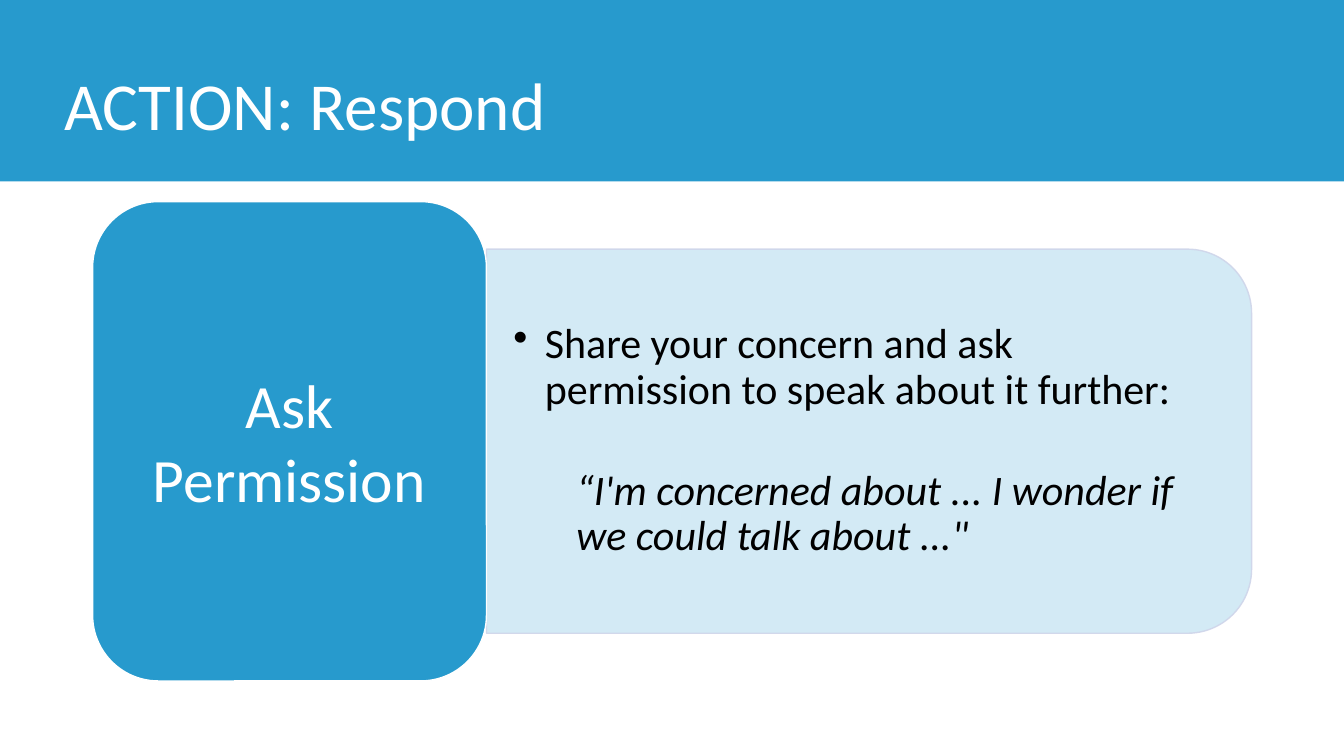
from dataclasses import dataclass

from lxml import etree
from pptx import Presentation
from pptx.dml.color import RGBColor
from pptx.enum.shapes import MSO_SHAPE
from pptx.enum.text import MSO_ANCHOR, PP_ALIGN
from pptx.oxml.ns import qn
from pptx.util import Pt

RECTANGLE = MSO_SHAPE.RECTANGLE
ROUNDED = MSO_SHAPE.ROUNDED_RECTANGLE
TWO_ROUNDED = MSO_SHAPE.ROUND_2_SAME_RECTANGLE
MIDDLE = MSO_ANCHOR.MIDDLE
LEFT, CENTER = PP_ALIGN.LEFT, PP_ALIGN.CENTER


@dataclass(frozen=True)
class Theme:
    """Colours, font and type sizes of the slide."""
    blue: RGBColor = RGBColor(0x27, 0x9A, 0xCD)
    outline: RGBColor = RGBColor(0xCF, 0xD5, 0xEA)
    white: RGBColor = RGBColor(0xFF, 0xFF, 0xFF)
    black: RGBColor = RGBColor(0, 0, 0)
    font: str = "Calibri"
    title_size: int = 48
    step_size: int = 44
    body_size: int = 30


THEME = Theme()


def add_block(slide, kind, box, outline=None):
    """Add a blue shape in the box, with an optional outline colour."""
    block = slide.shapes.add_shape(kind, *map(Pt, box))
    block.shadow.inherit = False
    block.fill.solid()
    block.fill.fore_color.rgb = THEME.blue
    if outline is None:
        block.line.fill.background()
    else:
        block.line.color.rgb = outline
        block.line.width = Pt(1)
    return block


def set_opacity(holder, percent):
    """Make the solid colour directly inside the holder translucent."""
    color = holder.find(qn("a:solidFill")).find(qn("a:srgbClr"))
    etree.SubElement(color, qn("a:alpha")).set("val", str(percent * 1000))


def set_frame(frame, side, edge):
    """Wrap and centre the frame vertically with the given insets."""
    frame.word_wrap = True
    frame.vertical_anchor = MIDDLE
    frame.margin_left = frame.margin_right = Pt(side)
    frame.margin_top = frame.margin_bottom = Pt(edge)


def style(paragraph, size, color, align=LEFT, spacing=0.9, italic=False):
    """Format a paragraph and its runs."""
    paragraph.alignment = align
    paragraph.line_spacing = spacing
    for run in paragraph.runs:
        run.font.name = THEME.font
        run.font.size = Pt(size)
        run.font.color.rgb = color
        run.font.italic = italic


def add_header(slide, box):
    """Draw the title band with its heading."""
    left, top, width, height = box
    add_block(slide, RECTANGLE, box)
    heading = slide.shapes.add_textbox(
        Pt(left + 38.9), Pt(top + 27.4), Pt(width - 110.4), Pt(height - 28.8))
    set_frame(heading.text_frame, 7.2, 3.6)
    heading.text_frame.text = "ACTION: Respond"
    style(heading.text_frame.paragraphs[0], THEME.title_size, THEME.white)


def add_guidance(slide, box):
    """Draw the pale panel with the advice and the sample wording."""
    left, top, width, height = box
    turned = (left + (width - height) / 2, top + (height - width) / 2,
              height, width)
    panel = add_block(slide, TWO_ROUNDED, turned, THEME.outline)
    panel.rotation = 90
    properties = panel.fill._xPr
    set_opacity(properties, 20)
    set_opacity(properties.find(qn("a:ln")), 90)

    advice_box = slide.shapes.add_textbox(
        Pt(left), Pt(top + 13.4), Pt(width - 13), Pt(height - 26.8))
    frame = advice_box.text_frame
    set_frame(frame, 19.2, 9.6)
    frame.text = ("Share your concern and ask permission to speak "
                  "about it further:")
    advice = frame.paragraphs[0]
    advice_format = advice._p.get_or_add_pPr()
    advice_format.set("marL", str(Pt(22.5)))
    advice_format.set("indent", str(Pt(-22.5)))
    etree.SubElement(advice_format, qn("a:buChar")).set("char", "•")
    style(advice, THEME.body_size, THEME.black)

    quote = frame.add_paragraph()
    quote.text = "“I'm concerned about ... I wonder if we could talk about ...\""
    quote._p.get_or_add_pPr().set("marL", str(Pt(45)))
    quote.space_before = Pt(40)
    style(quote, THEME.body_size, THEME.black, italic=True)


def add_step(slide, box):
    """Draw the blue card that names the step."""
    card = add_block(slide, ROUNDED, box, THEME.white)
    set_frame(card.text_frame, 13, 6.5)
    card.text_frame.text = "Ask Permission"
    style(card.text_frame.paragraphs[0], THEME.step_size, THEME.white,
          CENTER, 1.0)


def main():
    """Build and save the slide."""
    deck = Presentation()
    deck.slide_width, deck.slide_height = Pt(960), Pt(540)
    slide = deck.slides.add_slide(deck.slide_layouts[6])
    add_header(slide, (0, 0, 960, 129.6))
    add_guidance(slide, (347.5, 178, 546.5, 274.4))
    add_step(slide, (66.2, 144, 281.3, 342.4))
    deck.save("out.pptx")


if __name__ == "__main__":
    main()
